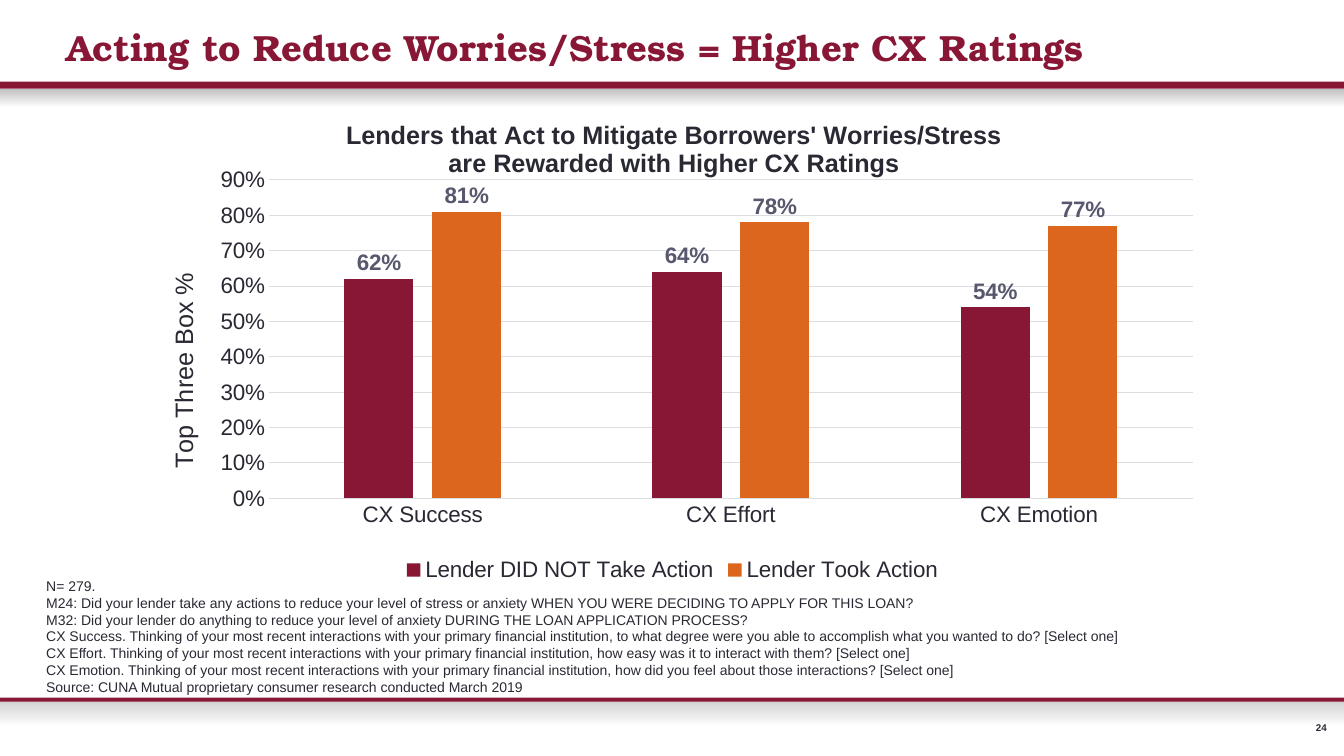
from lxml.etree import SubElement as Sub, Element
from pptx import Presentation
from pptx.chart.data import CategoryChartData as Data
from pptx.dml.color import RGBColor as RGB
from pptx.enum.chart import XL_CHART_TYPE as Kind, XL_LABEL_POSITION as Spot
from pptx.enum.chart import XL_LEGEND_POSITION as Side, XL_TICK_MARK as Tick
from pptx.enum.shapes import MSO_SHAPE as Form
from pptx.enum.text import MSO_ANCHOR as Anchor, PP_ALIGN as Align
from pptx.oxml.ns import qn
from pptx.util import Inches, Pt

HUES = {"wine": "881635", "rust": "DC661D", "ink": "292934", "slate": "57576E",
        "grid": "DCDCE3", "gray": "C0C0C0", "mist": "CFCFCF", "white": "FFFFFF"}
SANS, SERIF = "Arial", "TeX Gyre Bonum"
NOTES = [
    "N= 279.",
    "M24: Did your lender take any actions to reduce your level of stress or anxiety "
    "WHEN YOU WERE DECIDING TO APPLY FOR THIS LOAN?",
    "M32: Did your lender do anything to reduce your level of anxiety "
    "DURING THE LOAN APPLICATION PROCESS?",
    "CX Success. Thinking of your most recent interactions with your primary financial institution, "
    "to what degree were you able to accomplish what you wanted to do? [Select one]",
    "CX Effort. Thinking of your most recent interactions with your primary financial institution, "
    "how easy was it to interact with them? [Select one]",
    "CX Emotion. Thinking of your most recent interactions with your primary financial institution, "
    "how did you feel about those interactions? [Select one]",
    "Source: CUNA Mutual proprietary consumer research conducted March 2019",
]
CATS = ["CX Success", "CX Effort", "CX Emotion"]
BARS = [("Lender DID NOT Take Action", (0.62, 0.64, 0.54), "wine"),
        ("Lender Took Action", (0.81, 0.78, 0.77), "rust")]
HEAD = ["Lenders that Act to Mitigate Borrowers' Worries/Stress",
        "are Rewarded with Higher CX Ratings"]


class Page:
    def __init__(self, deck):
        self.wide, self.high = deck.slide_width, deck.slide_height
        self.slide = deck.slides.add_slide(deck.slide_layouts[6])
        self.shapes = self.slide.shapes

    def box(self, x, y, w, h):
        return [int(part * size / 100) for part, size in
                zip((x, y, w, h), (self.wide, self.high) * 2)]

    def hue(self, name):
        return RGB.from_string(HUES[name])

    def font(self, font, size, hue="ink", bold=False, face=SANS):
        font.size, font.bold, font.name = Pt(size), bold, face
        font.color.rgb = self.hue(hue)

    def fill(self, frame, lines, *style, align=None):
        for i, line in enumerate(lines):
            para = frame.add_paragraph() if i else frame.paragraphs[0]
            para.alignment = align
            run = para.add_run()
            run.text = line
            self.font(run.font, *style)

    def text(self, area, lines, *style, anchor=Anchor.TOP, align=None, tight=False):
        frame = self.shapes.add_textbox(*self.box(*area)).text_frame
        frame.word_wrap = not tight
        frame.vertical_anchor = anchor
        if tight:
            frame.margin_left = frame.margin_right = 0
            frame.margin_top = frame.margin_bottom = 0
        self.fill(frame, lines, *style, align=align)

    def band(self, y, h, *hues):
        shape = self.shapes.add_shape(Form.RECTANGLE, *self.box(0, y, 100, h))
        shape.shadow.inherit = False
        shape.line.fill.background()
        if len(hues) == 1:
            shape.fill.solid()
            shape.fill.fore_color.rgb = self.hue(hues[0])
            return
        shape.fill.gradient()
        shape.fill.gradient_angle = 270
        for stop, hue in zip(shape.fill.gradient_stops, hues):
            stop.color.rgb = self.hue(hue)

    def place(self, node, **spots):
        slot = node.find(qn("c:layout"))
        if slot is None:
            slot = Element(qn("c:layout"))
            node.insert(0, slot)
        plan = Sub(slot, qn("c:manualLayout"))
        if "w" in spots:
            Sub(plan, qn("c:layoutTarget")).set("val", "inner")
        for key in "xy":
            Sub(plan, qn(f"c:{key}Mode")).set("val", "edge")
        for key, share in spots.items():
            Sub(plan, qn(f"c:{key}")).set("val", str(share))

    def rule(self, line):
        line.width = Pt(0.75)
        line.color.rgb = self.hue("grid")

    def chart(self, area):
        data = Data(number_format="0%")
        data.categories = CATS
        for name, vals, _ in BARS:
            data.add_series(name, vals)
        chart = self.shapes.add_chart(Kind.COLUMN_CLUSTERED, *self.box(*area), data).chart
        self.font(chart.font, 10)
        self.fill(chart.chart_title.text_frame, HEAD, 18, "ink", True)
        self.place(chart.chart_title._element, x=0.19, y=0.04)
        self.place(chart._chartSpace.chart.plotArea, x=0.12, y=0.17, w=0.87, h=0.65)
        chart.has_legend = True
        chart.legend.position = Side.BOTTOM
        chart.legend.include_in_layout = False
        self.font(chart.legend.font, 16)
        self.axes(chart)
        self.bars(chart.plots[0])

    def axes(self, chart):
        cat, val = chart.category_axis, chart.value_axis
        for axis in (cat, val):
            axis.major_tick_mark = axis.minor_tick_mark = Tick.NONE
            self.font(axis.tick_labels.font, 16)
        self.rule(cat.format.line)
        val.format.line.fill.background()
        self.rule(val.major_gridlines.format.line)
        val.minimum_scale, val.maximum_scale, val.major_unit = 0, 0.9, 0.1
        val.tick_labels.number_format = "0%"
        val.tick_labels.number_format_is_linked = False
        title = val.axis_title
        self.fill(title.text_frame, ["Top Three Box %"], 18)
        title._element.find(".//" + qn("a:bodyPr")).set("rot", "-5400000")
        self.place(title._element, x=0.02, y=0.35)

    def bars(self, plot):
        plot.gap_width, plot.overlap = 219, -27
        plot.vary_by_categories = False
        for bar, (_, _, hue) in zip(plot.series, BARS):
            bar.format.fill.solid()
            bar.format.fill.fore_color.rgb = self.hue(hue)
            tags = bar.data_labels
            tags.show_value = True
            tags.position = Spot.OUTSIDE_END
            tags.number_format = "0%"
            tags.number_format_is_linked = False
            self.font(tags.font, 16, "slate", True)


def main():
    deck = Presentation()
    deck.slide_width, deck.slide_height = Inches(13.33), Inches(7.5)
    page = Page(deck)
    page.band(92.53, 3.6, "mist", "white")
    page.band(11.73, 2.53, "gray", "white")
    page.text((97.82, 95.47, 0.9, 1.6), ["24"], 7, "ink", True,
              anchor=Anchor.MIDDLE, align=Align.RIGHT, tight=True)
    page.band(92.27, 0.53, "wine")
    page.band(10.8, 0.93, "wine")
    page.text((4.2, 2.67, 95.8, 7.2), ["Acting to Reduce Worries/Stress = Higher CX Ratings"],
              26, "wine", True, SERIF, anchor=Anchor.MIDDLE)
    page.chart((10.5, 12.8, 79.07, 64.8))
    page.text((2.7, 75.73, 84.62, 21.6), NOTES, 10)
    deck.save("out.pptx")


if __name__ == "__main__":
    main()
